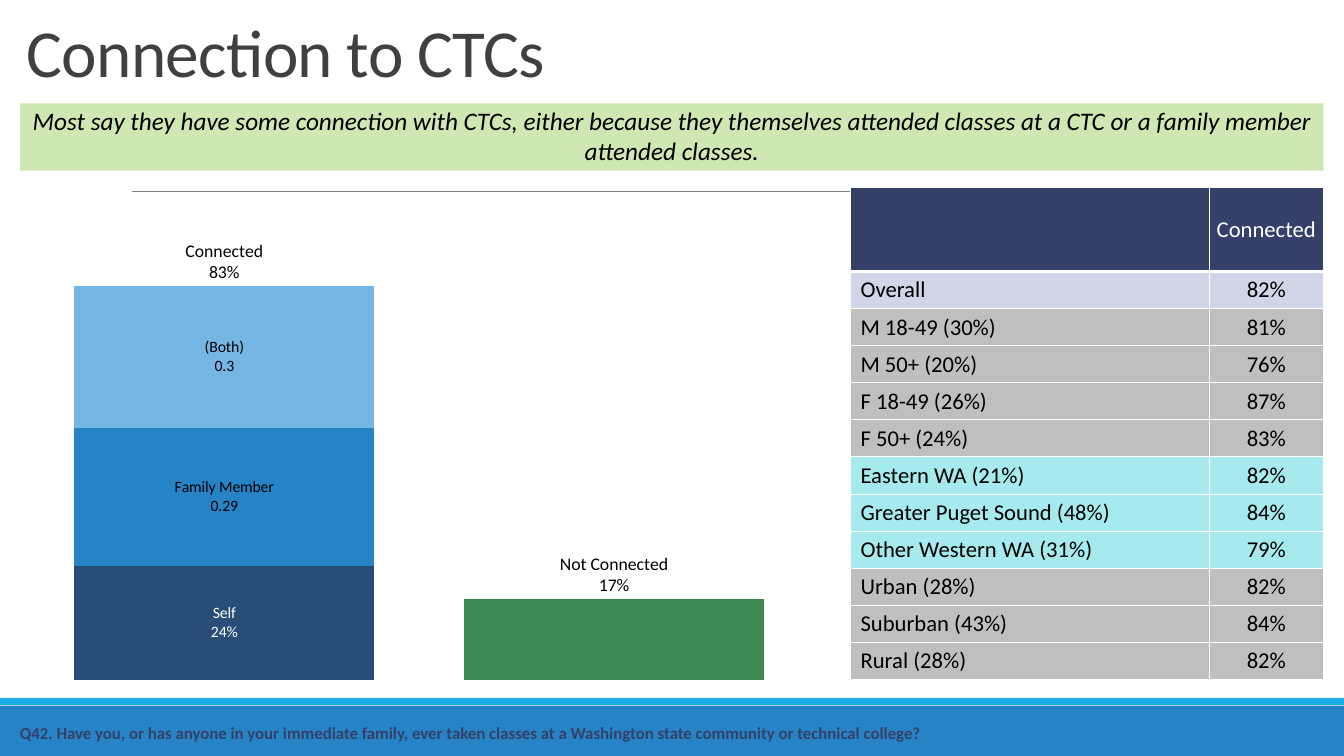
import pptx
import pptx.chart.data
import pptx.dml.color
import pptx.enum.chart
import pptx.enum.shapes
import pptx.enum.text
import pptx.oxml
import pptx.oxml.ns
import pptx.util

Inches, Pt = pptx.util.Inches, pptx.util.Pt
ALIGN, ANCHOR = pptx.enum.text.PP_ALIGN, pptx.enum.text.MSO_ANCHOR
LABEL = pptx.enum.chart.XL_LABEL_POSITION
FONT = "Calibri"
NAVY, BLUE, GRAY, AQUA = "344068", "2683C6", "BFBFBF", "A6EAEE"

SERIES = [
    ("Self", (0.24, 0.17), "284D77", "FFFFFF", "###0%"),
    ("Family Member", (0.29, None), BLUE, "000000", "General"),
    ("(Both)", (0.3, None), "75B6E5", "000000", "General"),
    ("Series 4", (0.83, 0.17), None, "000000", "0%"),
]
TOTALS = [("Connected", "83%"), ("Not Connected", "17%")]
GROUPS = [
    ("Overall", "82%", "D0D5E7"),
    ("M 18-49 (30%)", "81%", GRAY),
    ("M 50+ (20%)", "76%", GRAY),
    ("F 18-49 (26%)", "87%", GRAY),
    ("F 50+ (24%)", "83%", GRAY),
    ("Eastern WA (21%)", "82%", AQUA),
    ("Greater Puget Sound (48%)", "84%", AQUA),
    ("Other Western WA (31%)", "79%", AQUA),
    ("Urban (28%)", "82%", GRAY),
    ("Suburban (43%)", "84%", GRAY),
    ("Rural (28%)", "82%", GRAY),
]


def rgb(color):
    """Turn a hex string into a colour."""
    return pptx.dml.color.RGBColor.from_string(color)


def xml(tag, attrs="", inner="", ns="c"):
    """Build one XML element in the given namespace."""
    decl = pptx.oxml.ns.nsdecls(ns)
    return pptx.oxml.parse_xml(f"<{ns}:{tag} {decl} {attrs}>{inner}</{ns}:{tag}>")


def style_font(font, size, color, bold=False, italic=False):
    """Set the look of a font."""
    font.name, font.size = FONT, Pt(size)
    font.bold, font.italic = bold, italic
    font.color.rgb = rgb(color)


def write(tf, text, size, color, align=ALIGN.LEFT, anchor=ANCHOR.MIDDLE,
          insets=(0.1, 0.05, 0.1, 0.05), **style):
    """Write one paragraph into a text frame and return its run."""
    tf.word_wrap, tf.vertical_anchor = True, anchor
    tf.margin_left, tf.margin_top, tf.margin_right, tf.margin_bottom = map(Inches, insets)
    p = tf.paragraphs[0]
    p.alignment = align
    r = p.add_run()
    r.text = text
    style_font(r.font, size, color, **style)
    return r


def add_bar(slide, box, color):
    """Add a plain filled rectangle."""
    sp = slide.shapes.add_shape(pptx.enum.shapes.MSO_SHAPE.RECTANGLE, *map(Inches, box))
    sp.shadow.inherit = False
    sp.fill.solid()
    sp.fill.fore_color.rgb = rgb(color)
    sp.line.fill.background()
    return sp


def add_title(slide, box):
    """Add the slide title."""
    tf = slide.shapes.add_textbox(*map(Inches, box)).text_frame
    r = write(tf, "Connection to CTCs", 68.3, "404040", anchor=ANCHOR.BOTTOM)
    r.font._element.set("spc", "-70")
    tf.paragraphs[0].line_spacing = 0.85


def add_takeaway(slide, box):
    """Add the green band with the main finding."""
    sp = add_bar(slide, box, "CFE7B3")
    write(sp.text_frame, "Most say they have some connection with CTCs, either because they "
          "themselves attended classes at a CTC or a family member attended classes.",
          25.6, "000000", ALIGN.CENTER, ANCHOR.TOP, (0.1, 0.03, 0.1, 0.03), italic=True)


def add_rule(slide, x, y, width):
    """Add the thin gray line above the chart."""
    line = slide.shapes.add_connector(pptx.enum.shapes.MSO_CONNECTOR.STRAIGHT,
                                      Inches(x), Inches(y), Inches(x + width), Inches(y))
    line.line.color.rgb, line.line.width = rgb("808080"), Pt(0.5)
    line._element.spPr.append(xml("effectLst", ns="a"))


def add_footer(slide, box):
    """Add the blue footer with its accent strip and survey question."""
    x, y, w, h = box
    add_bar(slide, box, BLUE)
    add_bar(slide, (x, y - 0.11, w, 0.1), "1CADE4")
    tf = slide.shapes.add_textbox(*map(Inches, (x + 0.28, y + 0.18, 13.36, 0.39))).text_frame
    write(tf, "Q42. Have you, or has anyone in your immediate family, ever taken classes at a "
          "Washington state community or technical college?", 17.1, NAVY,
          anchor=ANCHOR.BOTTOM, insets=(0, 0.05, 0, 0.05), bold=True)


def label_totals(series):
    """Write the two-line total above each column."""
    for point, lines in enumerate(TOTALS):
        label = series.points[point].data_label
        tf = label.text_frame
        for i, text in enumerate(lines):
            p = tf.add_paragraph() if i else tf.paragraphs[0]
            r = p.add_run()
            r.text = text
            style_font(r.font, 18, "000000")
        label.position = LABEL.INSIDE_BASE


def add_connection_chart(slide, box):
    """Add the stacked columns of connected and not connected."""
    data = pptx.chart.data.CategoryChartData()
    data.categories = [name for name, _ in TOTALS]
    for name, values, *_ in SERIES:
        data.add_series(name, values)
    kind = pptx.enum.chart.XL_CHART_TYPE.COLUMN_STACKED
    chart = slide.shapes.add_chart(kind, *map(Inches, box), data).chart
    chart.has_legend = chart.has_title = False
    style_font(chart.font, 16, "000000")
    chart.category_axis.visible = chart.value_axis.visible = False
    chart.value_axis.has_major_gridlines = False
    chart.value_axis.minimum_scale, chart.value_axis.maximum_scale = 0, 1
    plot = chart.plots[0]
    plot.gap_width, plot.overlap, plot.vary_by_categories = 30, 100, False

    for s, (_, _, color, text_color, fmt) in zip(plot.series, SERIES):
        labels = s.data_labels
        labels.show_value = True
        labels.number_format, labels.number_format_is_linked = fmt, False
        style_font(labels.font, 16, text_color)
        if color:
            s.format.fill.solid()
            s.format.fill.fore_color.rgb = rgb(color)
            labels.show_series_name = True
        else:
            s.format.fill.background()
            labels.position = LABEL.INSIDE_BASE
            label_totals(s)
    not_connected = plot.series[0].points[1].format.fill
    not_connected.solid()
    not_connected.fore_color.rgb = rgb("3E8853")

    all_labels = chart.element.xpath(".//c:ser/c:dLbls")
    for labels in all_labels:
        labels.xpath("c:showBubbleSize")[0].addnext(xml("separator", inner="\n"))
    all_labels[0].insert(0, xml("dLbl", inner='<c:idx val="1"/><c:delete val="1"/>'))

    area = chart.element.xpath(".//c:plotArea")[0]
    for layout in area.xpath("c:layout"):
        area.remove(layout)
    places = [("layoutTarget", "inner"), ("xMode", "edge"), ("yMode", "edge"),
              ("x", 0.012), ("y", 0.032), ("w", 0.975), ("h", 0.945)]
    inner = "".join(f'<c:{tag} val="{val}"/>' for tag, val in places)
    area.insert(0, xml("layout", inner=f"<c:manualLayout>{inner}</c:manualLayout>"))


def style_cell(cell, color, bottom=1):
    """Give a cell its white borders and fill."""
    tcPr = cell._tc.get_or_add_tcPr()
    for side, width in (("L", 1), ("R", 1), ("T", 1), ("B", bottom)):
        tcPr.append(xml(f"ln{side}", f'w="{Pt(width)}"',
                        '<a:solidFill><a:srgbClr val="FFFFFF"/></a:solidFill>', "a"))
    cell.fill.solid()
    cell.fill.fore_color.rgb = rgb(color)


def write_cell(cell, text, color, align, insets):
    """Write a cell's text and centre it vertically."""
    write(cell.text_frame, text, 23, color, align)
    cell.vertical_anchor = ANCHOR.MIDDLE
    cell.margin_left, cell.margin_top, cell.margin_right, cell.margin_bottom = map(Inches, insets)


def add_group_table(slide, box):
    """Add the table of connection by group."""
    table = slide.shapes.add_table(len(GROUPS) + 1, 2, *map(Inches, box)).table
    header = 1.18
    for column, width in zip(table.columns, (5.06, box[2] - 5.06)):
        column.width = Inches(width)
    for i, row in enumerate(table.rows):
        row.height = Inches((box[3] - header) / len(GROUPS) if i else header)
    for col in range(2):
        style_cell(table.cell(0, col), NAVY, 3)
    write_cell(table.cell(0, 1), "Connected", "FFFFFF", ALIGN.CENTER, [0.07] * 4)
    for row, (group, share, color) in enumerate(GROUPS, 1):
        columns = ((group, ALIGN.LEFT, 0.14), (share, ALIGN.CENTER, 0.01))
        for col, (text, align, left) in enumerate(columns):
            cell = table.cell(row, col)
            style_cell(cell, color)
            write_cell(cell, text, "000000", align, (left, 0.01, 0.01, 0))


def main():
    """Build the slide and save it."""
    prs = pptx.Presentation()
    prs.slide_width, prs.slide_height = Inches(18.96), Inches(10.67)
    slide = prs.slides.add_slide(prs.slide_layouts[6])
    add_footer(slide, (0, 9.96, 18.96, 0.71))
    add_rule(slide, 1.86, 2.7, 15.5)
    add_title(slide, (0.28, 0.41, 16.68, 0.92))
    add_takeaway(slide, (0.28, 1.46, 18.39, 0.95))
    add_connection_chart(slide, (0.28, 2.67, 11.28, 7.09))
    add_group_table(slide, (12, 2.65, 6.67, 6.94))
    prs.save("out.pptx")


if __name__ == "__main__":
    main()
